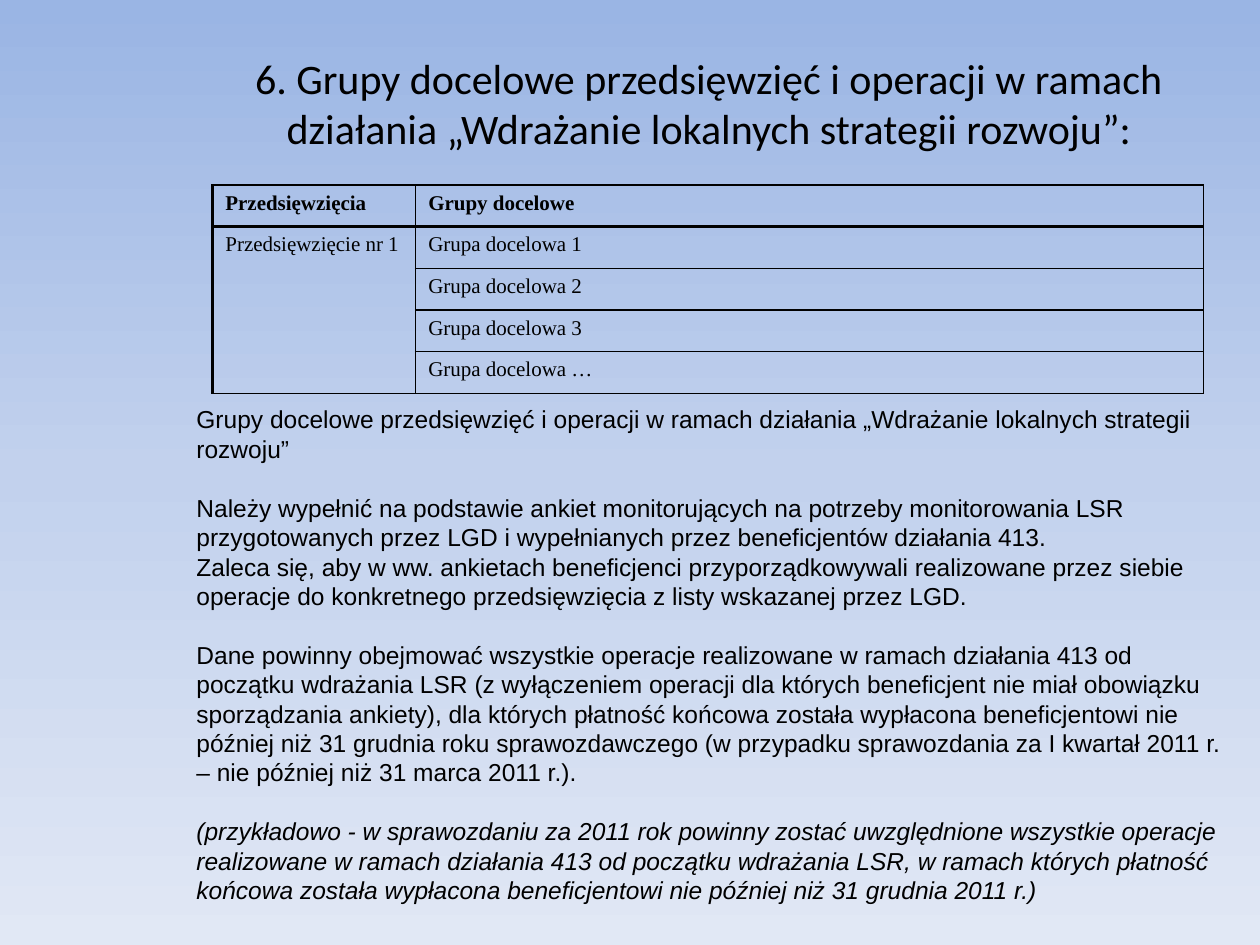
from copy import deepcopy
from dataclasses import dataclass

from lxml import etree
from pptx import Presentation
from pptx.dml.color import RGBColor
from pptx.enum.text import MSO_ANCHOR, PP_ALIGN
from pptx.oxml.ns import qn
from pptx.util import Cm, Pt

LEFT, CENTER = PP_ALIGN.LEFT, PP_ALIGN.CENTER
TOP, MIDDLE = MSO_ANCHOR.TOP, MSO_ANCHOR.MIDDLE


@dataclass(frozen=True)
class Theme:
    ink: str = "000000"
    background: tuple = ("9AB5E4", "C2D1ED", "E1E8F5")
    title_font: str = "Calibri"
    table_font: str = "Times New Roman"
    body_font: str = "Arial"
    title_size: float = 24
    table_size: float = 12
    body_size: float = 14
    body_line: float = 16.8
    thin: float = 1
    thick: float = 2


theme = Theme()


def write(paragraph, text, *, font, size, bold=False, italic=False,
          align=LEFT, line=None, before=0):
    paragraph.alignment = align
    paragraph.space_before = Pt(before)
    if line:
        paragraph.line_spacing = Pt(line)
    run = paragraph.add_run()
    run.text = text
    run.font.name = font
    run.font.size = Pt(size)
    run.font.bold = bold
    run.font.italic = italic
    run.font.color.rgb = RGBColor.from_string(theme.ink)


def set_borders(cell, **widths):
    """Draw the cell edges, given in points as L, R, T and B."""
    properties = cell._tc.get_or_add_tcPr()
    for position, (side, width) in enumerate(widths.items()):
        border = etree.Element(qn(f"a:ln{side}"), w=str(Pt(width)))
        fill = etree.SubElement(border, qn("a:solidFill"))
        etree.SubElement(fill, qn("a:srgbClr"), val=theme.ink)
        properties.insert(position, border)


presentation = Presentation()
presentation.slide_width = Cm(25.4)
presentation.slide_height = Cm(19.05)
slide = presentation.slides.add_slide(presentation.slide_layouts[6])

# Background: three colours from top to bottom
background = slide.background.fill
background.gradient()
background.gradient_angle = 270
stop_list = slide._element.find(".//" + qn("a:gsLst"))
stop_list.insert(1, deepcopy(stop_list[0]))
for index, color in enumerate(theme.background):
    stop = background.gradient_stops[index]
    stop.color.rgb = RGBColor.from_string(color)
    stop.position = index / 2

# Title
title = slide.shapes.add_textbox(Cm(3.38), Cm(0.2), Cm(21.82), Cm(3.73)).text_frame
title.word_wrap = True
title.vertical_anchor = MIDDLE
write(title.paragraphs[0],
      "6. Grupy docelowe przedsięwzięć i operacji w ramach działania "
      "„Wdrażanie lokalnych strategii rozwoju”:",
      font=theme.title_font, size=theme.title_size, align=CENTER)

# Table of target groups
rows = [
    ("Przedsięwzięcia", "Grupy docelowe"),
    ("Przedsięwzięcie nr 1", "Grupa docelowa 1"),
    ("", "Grupa docelowa 2"),
    ("", "Grupa docelowa 3"),
    ("", "Grupa docelowa …"),
]
column_widths = (4.09, 15.88)
row_height = 0.84
table = slide.shapes.add_table(
    len(rows), len(column_widths), Cm(4.29), Cm(3.73),
    Cm(sum(column_widths)), Cm(row_height * len(rows))).table
table.first_row = False
table.horz_banding = False
for column, width in zip(table.columns, column_widths):
    column.width = Cm(width)
for row_index, texts in enumerate(rows):
    table.rows[row_index].height = Cm(row_height)
    for column_index, text in enumerate(texts):
        cell = table.cell(row_index, column_index)
        cell.fill.background()
        set_borders(cell,
                    L=theme.thick if column_index == 0 else theme.thin,
                    R=theme.thin,
                    T=theme.thick if row_index == 1 else theme.thin,
                    B=theme.thick if row_index == 0 else theme.thin)
        if text:
            paragraph = cell.text_frame.paragraphs[0]
            hanging = paragraph._p.get_or_add_pPr()
            hanging.set("marL", str(Cm(0.97)))
            hanging.set("indent", str(-Cm(0.97)))
            write(paragraph, text, font=theme.table_font,
                  size=theme.table_size, bold=row_index == 0)
table.cell(1, 0).merge(table.cell(len(rows) - 1, 0))

# Explanation: text, space before, italic
gap = theme.body_line
explanation = [
    ("Grupy docelowe przedsięwzięć i operacji w ramach działania "
     "„Wdrażanie lokalnych strategii rozwoju”", 0, False),
    ("Należy wypełnić na podstawie ankiet monitorujących na potrzeby "
     "monitorowania LSR przygotowanych przez LGD i wypełnianych przez "
     "beneficjentów działania 413.", gap, False),
    ("Zaleca się, aby w ww. ankietach beneficjenci przyporządkowywali "
     "realizowane przez siebie operacje do konkretnego przedsięwzięcia "
     "z listy wskazanej przez LGD.", 0, False),
    ("Dane powinny obejmować wszystkie operacje realizowane w ramach "
     "działania 413 od  początku wdrażania LSR (z wyłączeniem operacji "
     "dla których beneficjent nie miał obowiązku sporządzania ankiety), "
     "dla których płatność końcowa została wypłacona beneficjentowi nie "
     "później niż 31 grudnia roku sprawozdawczego (w przypadku "
     "sprawozdania za I kwartał 2011 r. – nie później niż 31 marca "
     "2011 r.).", gap, False),
    ("(przykładowo - w sprawozdaniu za 2011 rok powinny zostać "
     "uwzględnione wszystkie operacje realizowane w ramach działania 413 "
     "od początku wdrażania LSR, w ramach których płatność końcowa "
     "została wypłacona beneficjentowi nie później niż 31 grudnia "
     "2011 r.)", gap, True),
]
body = slide.shapes.add_textbox(Cm(3.71), Cm(8.03), Cm(21.21), Cm(10.9)).text_frame
body.word_wrap = True
body.vertical_anchor = TOP
for index, (text, before, italic) in enumerate(explanation):
    paragraph = body.add_paragraph() if index else body.paragraphs[0]
    write(paragraph, text, font=theme.body_font, size=theme.body_size,
          italic=italic, line=theme.body_line, before=before)

presentation.save("out.pptx")
